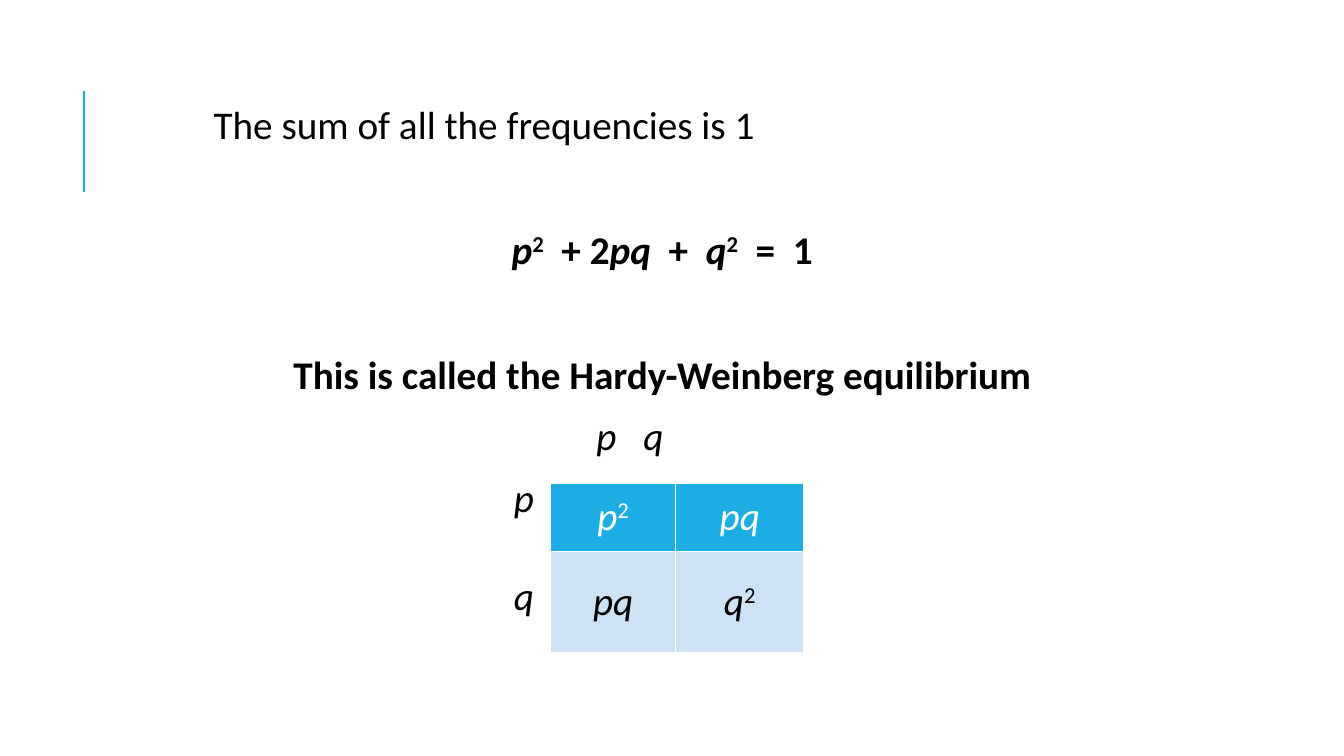
from lxml.etree import SubElement
from pptx import Presentation
from pptx.dml.color import RGBColor
from pptx.enum.shapes import MSO_CONNECTOR
from pptx.enum.text import MSO_ANCHOR, PP_ALIGN
from pptx.oxml.ns import qn
from pptx.util import Pt

BLACK, WHITE, ACCENT, PALE = "000000", "FFFFFF", "1CADE4", "CDE3F5"
LINE_GAP = 56.8  # usual gap plus one empty line
COLUMN_STOPS, ROW_STOPS = (273.5, 307), (214.5,)


def color(value):
    return RGBColor.from_string(value)


def write(para, runs, ink=BLACK, bold=False):
    """Add runs of (text, style): i is italic, s is superscript."""
    for text, style in runs:
        span = para.add_run()
        span.text = text
        span.font.name = "Calibri"
        span.font.size = Pt(28)
        span.font.bold = bold
        span.font.italic = "i" in style
        span.font.color.rgb = color(ink)
        if "s" in style:
            span.font._element.set("baseline", "30000")


def set_tab_stops(para, stops):
    tabs = SubElement(para._p.get_or_add_pPr(), qn("a:tabLst"))
    for stop in stops:
        SubElement(tabs, qn("a:tab"), pos=str(int(Pt(stop))), algn="l")


def add_accent_line(page, x, top, height):
    line = page.shapes.add_connector(
        MSO_CONNECTOR.STRAIGHT, Pt(x), Pt(top + height), Pt(x), Pt(top))
    line.line.color.rgb = color(ACCENT)
    line.line.width = Pt(1.5)
    SubElement(line._element.spPr, qn("a:effectLst"))


def add_body(page, left, top, width, height):
    """Statement, equation and the labels around the Punnett square."""
    box = page.shapes.add_textbox(Pt(left), Pt(top), Pt(width), Pt(height))
    frame = box.text_frame
    frame.word_wrap = True
    frame.margin_left = frame.margin_right = Pt(3.6)
    frame.margin_top = frame.margin_bottom = Pt(3.6)
    equation = [("p", "i"), ("2", "s"), ("  + 2", ""), ("pq", "i"),
                ("  +  ", ""), ("q", "i"), ("2", "s"), ("  =  1", "")]
    law = [("This is called the Hardy-Weinberg equilibrium", "")]
    # runs, bold and centred, space before, tab stops
    lines = [
        ([("The sum of all the frequencies is 1", "")], False, 12, ()),
        (equation, True, LINE_GAP, ()),
        (law, True, LINE_GAP, ()),
        ([("\tp\tq", "i")], False, 12, COLUMN_STOPS),
        ([("\tp", "i")], False, 12, ROW_STOPS),
        ([("\tq", "i")], False, 37.2, ROW_STOPS),
    ]
    for index, (runs, strong, before, stops) in enumerate(lines):
        para = frame.add_paragraph() if index else frame.paragraphs[0]
        para.alignment = PP_ALIGN.CENTER if strong else PP_ALIGN.LEFT
        para.line_spacing = 0.9
        para.space_before = Pt(before)
        para.space_after = Pt(2)
        if stops:
            set_tab_stops(para, stops)
        write(para, runs, bold=strong)


def set_borders(cell):
    properties = cell._tc.get_or_add_tcPr()
    for position, side in enumerate(("lnL", "lnR", "lnT", "lnB")):
        edge = SubElement(properties, qn(f"a:{side}"), w=str(int(Pt(1))))
        fill = SubElement(edge, qn("a:solidFill"))
        SubElement(fill, qn("a:srgbClr"), val=WHITE)
        properties.insert(position, edge)


def add_punnett_square(page, left, top, widths, heights):
    table = page.shapes.add_table(
        len(heights), len(widths), Pt(left), Pt(top),
        Pt(sum(widths)), Pt(sum(heights))).table
    for column, width in zip(table.columns, widths):
        column.width = Pt(width)
    mixed = [("pq", "i")]
    genotypes = [[[("p", "i"), ("2", "s")], mixed],
                 [mixed, [("q", "i"), ("2", "s")]]]
    styles = [(ACCENT, WHITE), (PALE, BLACK)]
    for row, height, entries, (fill, ink) in zip(
            table.rows, heights, genotypes, styles):
        row.height = Pt(height)
        for cell, runs in zip(row.cells, entries):
            cell.fill.solid()
            cell.fill.fore_color.rgb = color(fill)
            cell.vertical_anchor = MSO_ANCHOR.MIDDLE
            set_borders(cell)
            para = cell.text_frame.paragraphs[0]
            para.alignment = PP_ALIGN.CENTER
            write(para, runs, ink)


def main():
    deck = Presentation()
    deck.slide_width, deck.slide_height = Pt(960), Pt(540)
    page = deck.slides.add_slide(deck.slide_layouts[6])
    add_accent_line(page, 60, 65, 72)
    add_body(page, 149, 72, 648, 425)
    add_punnett_square(page, 393.2, 345, (89.5, 91.5), (49, 72))
    deck.save("out.pptx")


if __name__ == "__main__":
    main()
